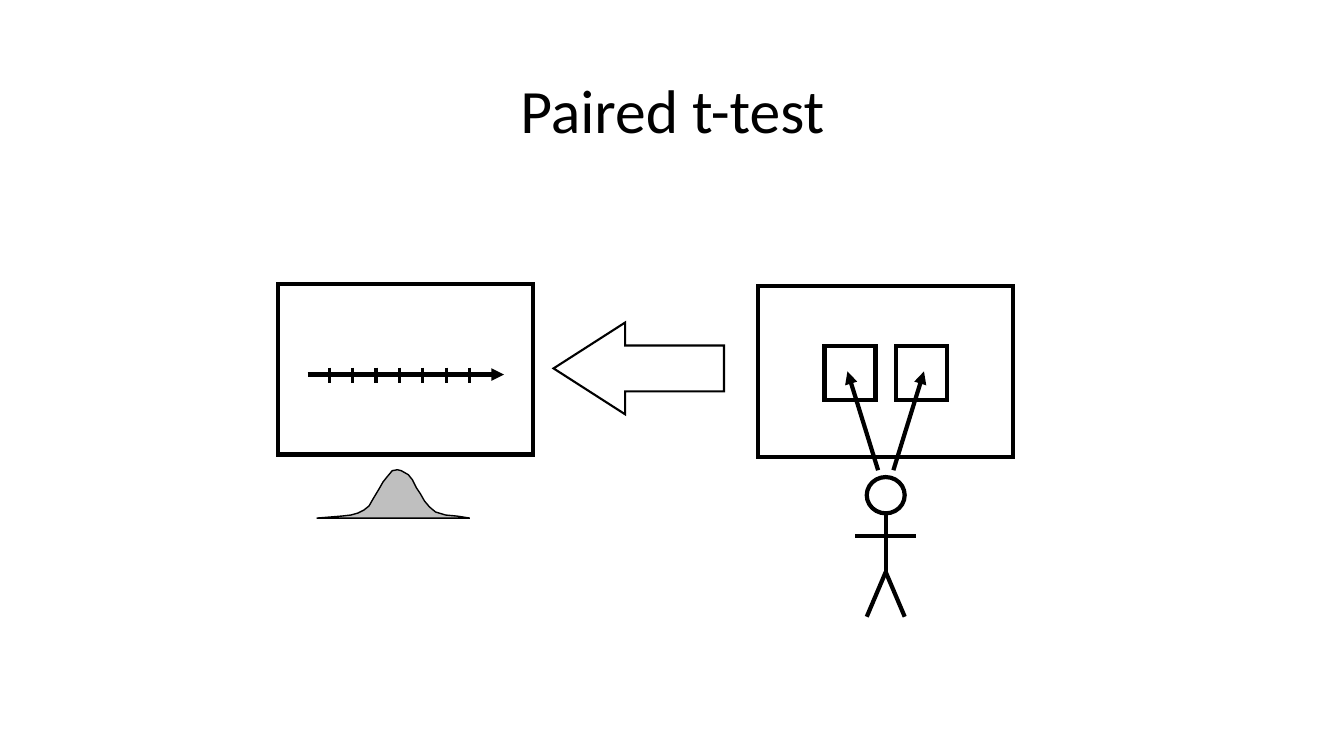
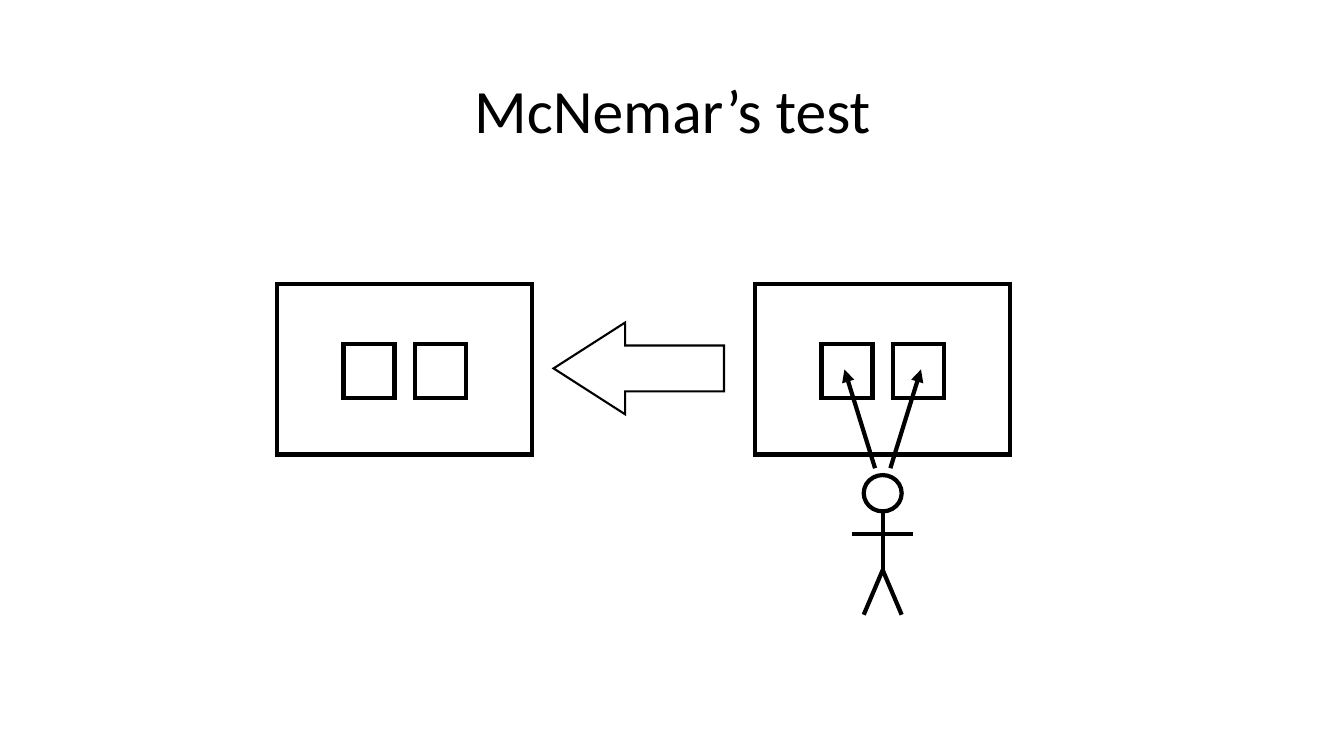
from dataclasses import dataclass

from lxml import etree
from pptx import Presentation
from pptx.dml.color import RGBColor
from pptx.enum.shapes import MSO_CONNECTOR, MSO_SHAPE
from pptx.enum.text import MSO_ANCHOR, PP_ALIGN
from pptx.oxml.ns import qn
from pptx.util import Inches, Pt

RECTANGLE, OVAL, LEFT_ARROW = MSO_SHAPE.RECTANGLE, MSO_SHAPE.OVAL, MSO_SHAPE.LEFT_ARROW
STRAIGHT = MSO_CONNECTOR.STRAIGHT
CENTER, MIDDLE = PP_ALIGN.CENTER, MSO_ANCHOR.MIDDLE

BLACK = RGBColor(0x00, 0x00, 0x00)
WHITE = RGBColor(0xFF, 0xFF, 0xFF)
GRAY = RGBColor(0xBF, 0xBF, 0xBF)
FONT = "Calibri"
THICK, TICK, MEDIUM, THIN = 3, 2.25, 1.5, 1  # line widths in points
TITLE_ONLY = 5

# Bell outline on a grid of 152 columns and 48 rows: column, height above base
BELL_COLUMNS, BELL_ROWS = 152, 48
BELL_OUTLINE = [
    (13, 1), (25, 2), (34, 3), (41, 5), (47, 8), (52, 12), (56, 19), (62, 29),
    (66, 36), (70, 41), (75, 47), (80, 48), (84, 47), (91, 43), (95, 38),
    (99, 30), (103, 24), (107, 17), (112, 11), (118, 6), (128, 3), (139, 2), (152, 0),
]


@dataclass
class Box:
    """A region in inches, whose inner areas are given as shares of its size."""
    left: float
    top: float
    width: float
    height: float

    def point(self, x, y):
        return Inches(self.left + x * self.width), Inches(self.top + y * self.height)

    def area(self, x, y, width, height):
        return Box(self.left + x * self.width, self.top + y * self.height,
                   width * self.width, height * self.height)

    def lengths(self):
        return [Inches(v) for v in (self.left, self.top, self.width, self.height)]


TITLE = Box(0.92, 0.4, 11.5, 1.45)
TRANSFER_ARROW = Box(5.49, 3.2, 1.69, 0.91)
BELL = Box(3.14, 4.66, 1.52, 0.48)


def screen_box(left, top):
    return Box(left, top, 2.53, 1.69)


def style_outline(shape, fill, width):
    shape.shadow.inherit = False
    shape.fill.solid()
    shape.fill.fore_color.rgb = fill
    shape.line.color.rgb = BLACK
    shape.line.width = Pt(width)
    etree.SubElement(shape.element.spPr.get_or_add_ln(), qn("a:miter"), lim="800000")


def add_outline(slide, kind, box, width=THICK):
    shape = slide.shapes.add_shape(kind, *box.lengths())
    style_outline(shape, WHITE, width)
    return shape


def add_line(slide, box, start, end, width=THICK, arrow=False):
    """Draw a line between two points given as shares of the box."""
    line = slide.shapes.add_connector(STRAIGHT, *box.point(*start), *box.point(*end))
    line.line.color.rgb = BLACK
    line.line.width = Pt(width)
    properties = line.element.spPr
    if arrow:
        etree.SubElement(properties.get_or_add_ln(), qn("a:tailEnd"), type="triangle")
    etree.SubElement(properties, qn("a:effectLst"))


def add_title(slide, text):
    title = slide.shapes.title
    title.left, title.top, title.width, title.height = TITLE.lengths()
    title.text_frame.vertical_anchor = MIDDLE
    paragraph = title.text_frame.paragraphs[0]
    paragraph.alignment = CENTER
    paragraph.line_spacing = 0.9
    run = paragraph.add_run()
    run.text = text
    run.font.name = FONT
    run.font.size = Pt(44)
    run.font.color.rgb = BLACK


def add_button_screen(slide, box):
    """Screen with two centred buttons."""
    add_outline(slide, RECTANGLE, box)
    button, gap = 0.2, 0.08
    first = (1 - 2 * button - gap) / 2
    for index in range(2):
        add_outline(slide, RECTANGLE,
                    box.area(first + index * (button + gap), 0.35, button, 0.32))


def add_person(slide, box):
    """Stick figure that fills the box."""
    neck, hip = (0.5, 0.26), (0.5, 0.68)
    add_outline(slide, OVAL, box.area(0.19, 0, 0.62, 0.26))
    for start, end in [(neck, hip), (hip, (0.19, 1)), (hip, (0.81, 1)),
                       ((0, 0.42), (1, 0.42))]:
        add_line(slide, box, start, end)


def add_viewed_screen(slide, box):
    """Button screen with a person below who looks at both buttons."""
    add_button_screen(slide, box)
    add_person(slide, box.area(0.38, 1.12, 0.24, 0.82))
    for side in (-1, 1):
        add_line(slide, box, (0.5 + side * 0.03, 1.08), (0.5 + side * 0.15, 0.5), arrow=True)


def add_scale_screen(slide, box):
    """Screen with a number line of seven ticks."""
    add_outline(slide, RECTANGLE, box)
    length, axis = 0.77, 0.53
    margin = (1 - length) / 2
    add_line(slide, box, (margin, axis), (1 - margin, axis), arrow=True)
    ticks, first, last = 7, 0.2, 0.75
    for index in range(ticks):
        x = first + index * (last - first) / (ticks - 1)
        add_line(slide, box, (x, axis - 0.04), (x, axis + 0.05), TICK)


def add_bell(slide, box):
    builder = slide.shapes.build_freeform(*box.point(0, 1), scale=1)
    builder.add_line_segments(
        [box.point(column / BELL_COLUMNS, 1 - row / BELL_ROWS)
         for column, row in BELL_OUTLINE], close=True)
    style_outline(builder.convert_to_shape(), GRAY, THIN)


def add_transfer_arrow(slide, box):
    arrow = add_outline(slide, LEFT_ARROW, box, MEDIUM)
    arrow.adjustments[0] = 0.5
    arrow.adjustments[1] = 0.78


def add_test_slide(presentation, title, add_left_screen, left_box, right_box):
    slide = presentation.slides.add_slide(presentation.slide_layouts[TITLE_ONLY])
    add_title(slide, title)
    add_left_screen(slide, left_box)
    add_transfer_arrow(slide, TRANSFER_ARROW)
    add_viewed_screen(slide, right_box)
    return slide


def main():
    presentation = Presentation()
    presentation.slide_width, presentation.slide_height = Inches(13.33), Inches(7.5)

    # Paired t-test: a measured scale with its distribution
    slide = add_test_slide(presentation, "Paired t-test", add_scale_screen,
                           screen_box(2.76, 2.82), screen_box(7.52, 2.84))
    add_bell(slide, BELL)

    # McNemar's test: a choice between two buttons
    add_test_slide(presentation, "McNemar’s test", add_button_screen,
                   screen_box(2.75, 2.82), screen_box(7.49, 2.82))

    presentation.save("out.pptx")


if __name__ == "__main__":
    main()
